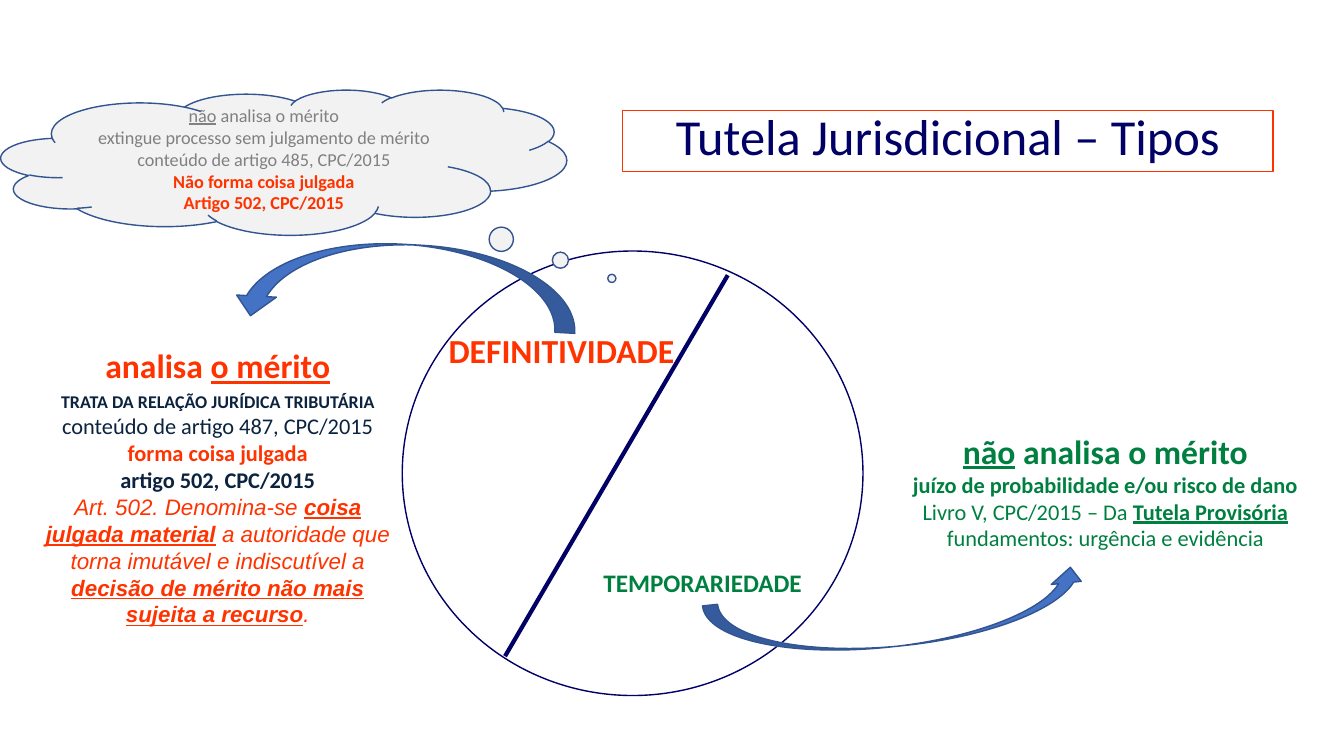
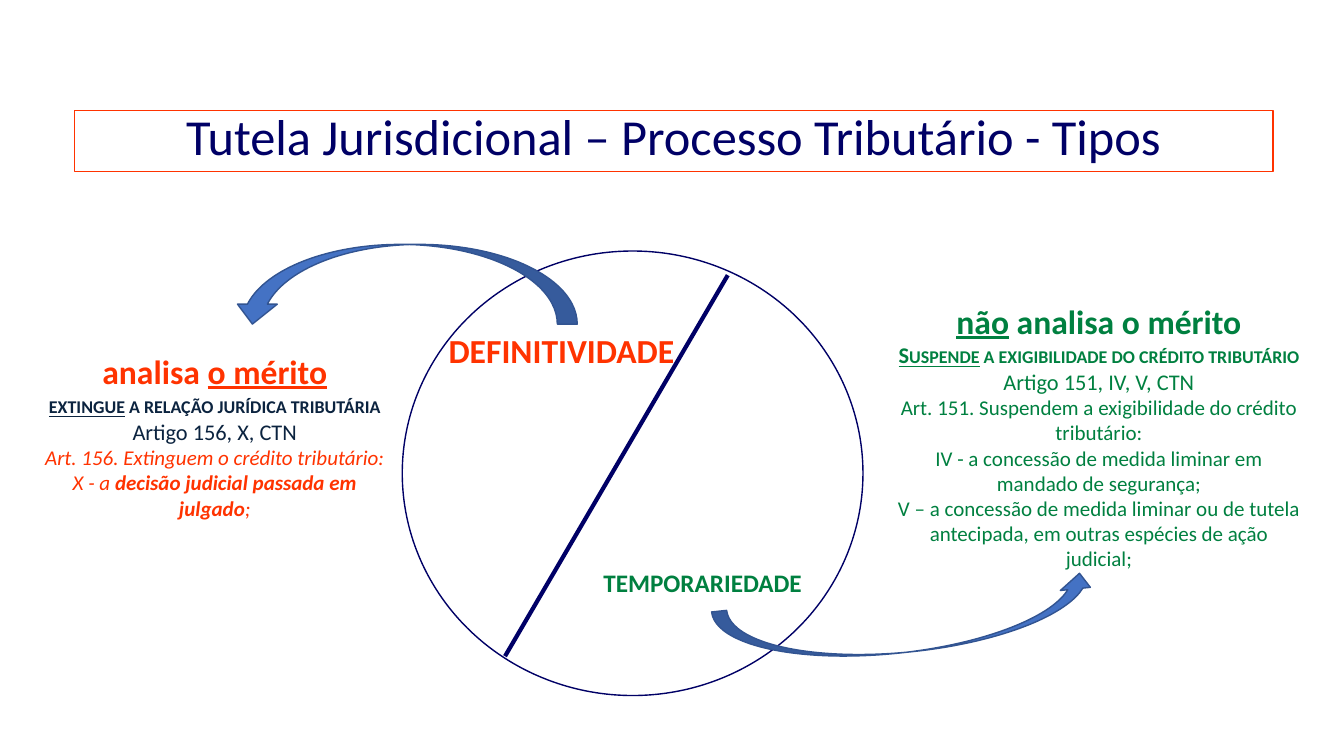
from dataclasses import asdict, dataclass
from typing import NamedTuple

from lxml import etree
from pptx import Presentation
from pptx.dml.color import RGBColor
from pptx.enum.shapes import MSO_CONNECTOR, MSO_SHAPE
from pptx.enum.text import MSO_ANCHOR, MSO_AUTO_SIZE, PP_ALIGN
from pptx.oxml.ns import qn
from pptx.util import Inches, Pt

STRAIGHT = MSO_CONNECTOR.STRAIGHT
OVAL = MSO_SHAPE.OVAL
CURVED_ARROW = MSO_SHAPE.CURVED_RIGHT_ARROW
CLOUD = MSO_SHAPE.CLOUD_CALLOUT
MIDDLE = MSO_ANCHOR.MIDDLE
BOTTOM = MSO_ANCHOR.BOTTOM
CENTER = PP_ALIGN.CENTER
NO_AUTOFIT = MSO_AUTO_SIZE.NONE

SLIDE_WIDTH = Inches(13.333)
SLIDE_HEIGHT = Inches(7.5)
TITLE_ONLY = 5


@dataclass(frozen=True)
class Theme:
    navy: str = "000066"
    ink: str = "0B233F"
    red: str = "FF3300"
    green: str = "008040"
    gray: str = "808080"
    white: str = "FFFFFF"
    cloud: str = "F2F2F2"
    arrow: str = "4472C4"
    outline: str = "325491"
    font: str = "Calibri"
    law_font: str = "Arial"
    title: float = 36
    heading: float = 24
    label: float = 18
    body: float = 16
    article: float = 15
    note: float = 13
    title_opacity: int = 47


THEME = Theme()


@dataclass(frozen=True)
class Span:
    text: str
    size: float = THEME.body
    color: str = THEME.ink
    bold: bool = False
    italic: bool = False
    underline: bool = False
    small_caps: bool = False
    font: str = THEME.font


Lines = list[list[Span]]


class Area(NamedTuple):
    """Percentages of the slide's width and height."""
    left: float
    top: float
    width: float
    height: float


@dataclass(frozen=True)
class Arrow:
    area: Area
    rotation: float


@dataclass(frozen=True)
class TextBlock:
    area: Area
    lines: Lines


@dataclass(frozen=True)
class TutelaSlide:
    title: str
    title_left: float
    merit: TextBlock
    no_merit: TextBlock
    merit_arrow: Arrow
    no_merit_arrow: Arrow
    cloud: TextBlock | None = None


TITLE_RIGHT = 94.72
CIRCLE = Area(29.93, 33.2, 34.28, 58.8)
DIVIDER_START = (54.15, 36.4)
DIVIDER_END = (37.58, 86.8)
CLOUD_TAIL = (0.58, 0.8)
MERIT_ARROW_AREA = Area(27.16, 14.8, 5.93, 45.6)

HALF_LABELS = [
    TextBlock(Area(32.25, 39.6, 19.05, 13.33),
              [[Span("DEFINITIVIDADE", THEME.heading, THEME.red, bold=True)]]),
    TextBlock(Area(43.88, 72.53, 16.8, 8.93),
              [[Span("TEMPORARIEDADE", THEME.label, THEME.green, bold=True)]]),
]

MERIT_HEADING = [
    Span("analisa ", THEME.heading, THEME.red, bold=True),
    Span("o mérito", THEME.heading, THEME.red, bold=True, underline=True),
]
NO_MERIT_HEADING = [
    Span("não", THEME.heading, THEME.green, bold=True, underline=True),
    Span(" analisa o mérito", THEME.heading, THEME.green, bold=True),
]


def law(text: str, strong: bool = False) -> Span:
    return Span(text, color=THEME.red, bold=strong, italic=True,
                underline=strong, font=THEME.law_font)


def tax_law(text: str, strong: bool = False) -> Span:
    return Span(text, THEME.article, THEME.red, bold=strong, italic=True)


def provisional(text: str, size: float = THEME.body, **style: bool) -> Span:
    return Span(text, size, THEME.green, **style)


def note(text: str, underline: bool = False) -> Span:
    return Span(text, THEME.note, THEME.gray, underline=underline)


def warning(text: str) -> Span:
    return Span(text, THEME.note, THEME.red, bold=True)


SLIDES = [
    TutelaSlide(
        title="Tutela Jurisdicional – Tipos",
        title_left=46.35,
        merit=TextBlock(Area(2.25, 41.87, 27.91, 44.93), [
            MERIT_HEADING,
            [Span("trata da relação jurídica tributária", bold=True, small_caps=True)],
            [Span("conteúdo de artigo 487, CPC/2015")],
            [Span("forma coisa julgada", color=THEME.red, bold=True)],
            [Span("artigo 502, CPC/2015", bold=True)],
            [law("Art. 502. Denomina-se "),
             law("coisa julgada material", strong=True),
             law(" a autoridade que torna imutável e indiscutível a "),
             law("decisão de mérito não mais sujeita a recurso", strong=True),
             law(".")],
        ]),
        no_merit=TextBlock(Area(66.98, 55.07, 30.53, 19.73), [
            NO_MERIT_HEADING,
            [provisional("juízo de probabilidade e/ou risco de dano", bold=True)],
            [provisional("Livro V, CPC/2015 – Da "),
             provisional("Tutela Provisória", bold=True, underline=True)],
            [provisional("fundamentos: urgência e evidência")],
        ]),
        merit_arrow=Arrow(MERIT_ARROW_AREA, 93.1),
        no_merit_arrow=Arrow(Area(64.5, 56, 4.5, 50.93), 264),
        cloud=TextBlock(Area(0.08, 11.87, 42.08, 19.2), [
            [note("não", underline=True), note(" analisa o mérito")],
            [note("extingue processo sem julgamento de mérito")],
            [note("conteúdo de artigo 485, CPC/2015")],
            [warning("Não forma coisa julgada")],
            [warning("Artigo 502, CPC/2015")],
        ]),
    ),
    TutelaSlide(
        title="Tutela Jurisdicional – Processo Tributário - Tipos",
        title_left=5.55,
        merit=TextBlock(Area(1.95, 42.67, 28.06, 29.87), [
            MERIT_HEADING,
            [Span("extingue", bold=True, underline=True, small_caps=True),
             Span(" a relação jurídica tributária", bold=True, small_caps=True)],
            [Span("Artigo 156, X, CTN")],
            [tax_law("Art. 156. Extinguem o crédito tributário:")],
            [tax_law("X - a "),
             tax_law("decisão judicial passada em julgado", strong=True),
             tax_law(";")],
        ]),
        no_merit=TextBlock(Area(65.94, 38.53, 31.66, 38.27), [
            NO_MERIT_HEADING,
            [provisional("Suspende", bold=True, underline=True, small_caps=True),
             provisional(" a exigibilidade do crédito tributário", bold=True,
                         small_caps=True)],
            [provisional("Artigo 151, IV, V, CTN")],
            [provisional("Art. 151. Suspendem a exigibilidade do crédito tributário:",
                         THEME.article)],
            [provisional("IV - a concessão de medida liminar em mandado de segurança;",
                         THEME.article)],
            [provisional("V – a concessão de medida liminar ou de tutela antecipada, "
                         "em outras espécies de ação judicial;", THEME.article)],
        ]),
        merit_arrow=Arrow(MERIT_ARROW_AREA, 90),
        no_merit_arrow=Arrow(Area(65.18, 56.8, 4.5, 50.93), 264),
    ),
]


def across(share: float) -> int:
    return round(SLIDE_WIDTH * share / 100)


def down(share: float) -> int:
    return round(SLIDE_HEIGHT * share / 100)


def place(area: Area) -> tuple[int, int, int, int]:
    return across(area.left), down(area.top), across(area.width), down(area.height)


def add_text(paragraph, text: str, *, size: float, color: str, bold: bool = False,
             italic: bool = False, underline: bool = False,
             small_caps: bool = False, font: str = THEME.font) -> None:
    run = paragraph.add_run()
    run.text = text
    run.font.name = font
    run.font.size = Pt(size)
    run.font.color.rgb = RGBColor.from_string(color)
    run.font.bold = bold
    run.font.italic = italic
    run.font.underline = underline
    if small_caps:
        run._r.get_or_add_rPr().set("cap", "small")


def fill_lines(frame, lines: Lines) -> None:
    frame.word_wrap = True
    frame.vertical_anchor = MIDDLE
    for index, spans in enumerate(lines):
        paragraph = frame.add_paragraph() if index else frame.paragraphs[0]
        paragraph.alignment = CENTER
        for span in spans:
            add_text(paragraph, **asdict(span))


def set_line(shape, color: str, width: float) -> None:
    shape.line.color.rgb = RGBColor.from_string(color)
    shape.line.width = Pt(width)


def set_fill(shape, color: str) -> None:
    shape.fill.solid()
    shape.fill.fore_color.rgb = RGBColor.from_string(color)


def add_outlined(slide, preset, area: Area, line: str, fill: str | None = None):
    shape = slide.shapes.add_shape(preset, *place(area))
    shape.shadow.inherit = False
    set_line(shape, line, 1)
    if fill:
        set_fill(shape, fill)
    else:
        shape.fill.background()
    return shape


def add_title(slide, text: str, left: float) -> None:
    title = slide.shapes.title
    area = Area(left, 14.67, TITLE_RIGHT - left, 8)
    title.left, title.top, title.width, title.height = place(area)
    set_fill(title, THEME.white)
    tint = title.element.spPr.find(f".//{qn('a:srgbClr')}")
    etree.SubElement(tint, qn("a:alpha"), val=str(THEME.title_opacity * 1000))
    set_line(title, THEME.red, 0.75)
    frame = title.text_frame
    fill_lines(frame, [[Span(text, THEME.title, THEME.navy)]])
    frame.auto_size = NO_AUTOFIT
    frame.vertical_anchor = BOTTOM
    frame.paragraphs[0].line_spacing = 0.9


def add_block(slide, block: TextBlock) -> None:
    fill_lines(slide.shapes.add_textbox(*place(block.area)).text_frame, block.lines)


def add_divided_circle(slide) -> None:
    add_outlined(slide, OVAL, CIRCLE, THEME.navy)
    (x1, y1), (x2, y2) = DIVIDER_START, DIVIDER_END
    divider = slide.shapes.add_connector(STRAIGHT, across(x1), down(y1),
                                         across(x2), down(y2))
    set_line(divider, THEME.navy, 3)
    etree.SubElement(divider.element.spPr, qn("a:effectLst"))


def add_cloud(slide, cloud: TextBlock) -> None:
    shape = add_outlined(slide, CLOUD, cloud.area, THEME.outline, THEME.cloud)
    for index, offset in enumerate(CLOUD_TAIL):
        shape.adjustments[index] = offset
    fill_lines(shape.text_frame, cloud.lines)


def build_slide(deck, content: TutelaSlide) -> None:
    slide = deck.slides.add_slide(deck.slide_layouts[TITLE_ONLY])
    add_title(slide, content.title, content.title_left)
    add_divided_circle(slide)
    for block in [*HALF_LABELS, content.merit, content.no_merit]:
        add_block(slide, block)
    for arrow in (content.merit_arrow, content.no_merit_arrow):
        shape = add_outlined(slide, CURVED_ARROW, arrow.area, THEME.outline, THEME.arrow)
        shape.rotation = arrow.rotation
    if content.cloud:
        add_cloud(slide, content.cloud)


def main() -> None:
    deck = Presentation()
    deck.slide_width = SLIDE_WIDTH
    deck.slide_height = SLIDE_HEIGHT
    for content in SLIDES:
        build_slide(deck, content)
    deck.save("out.pptx")


if __name__ == "__main__":
    main()
